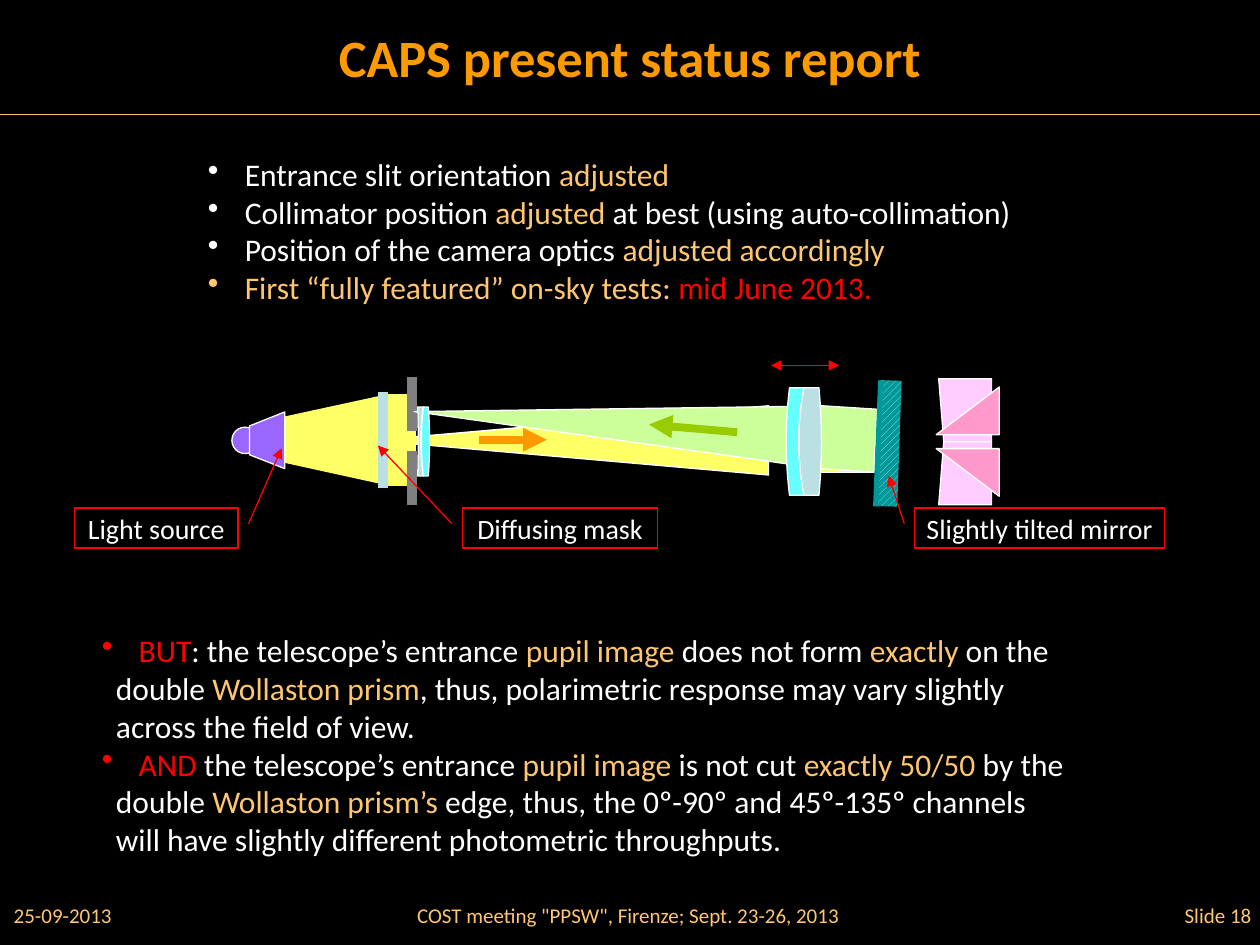
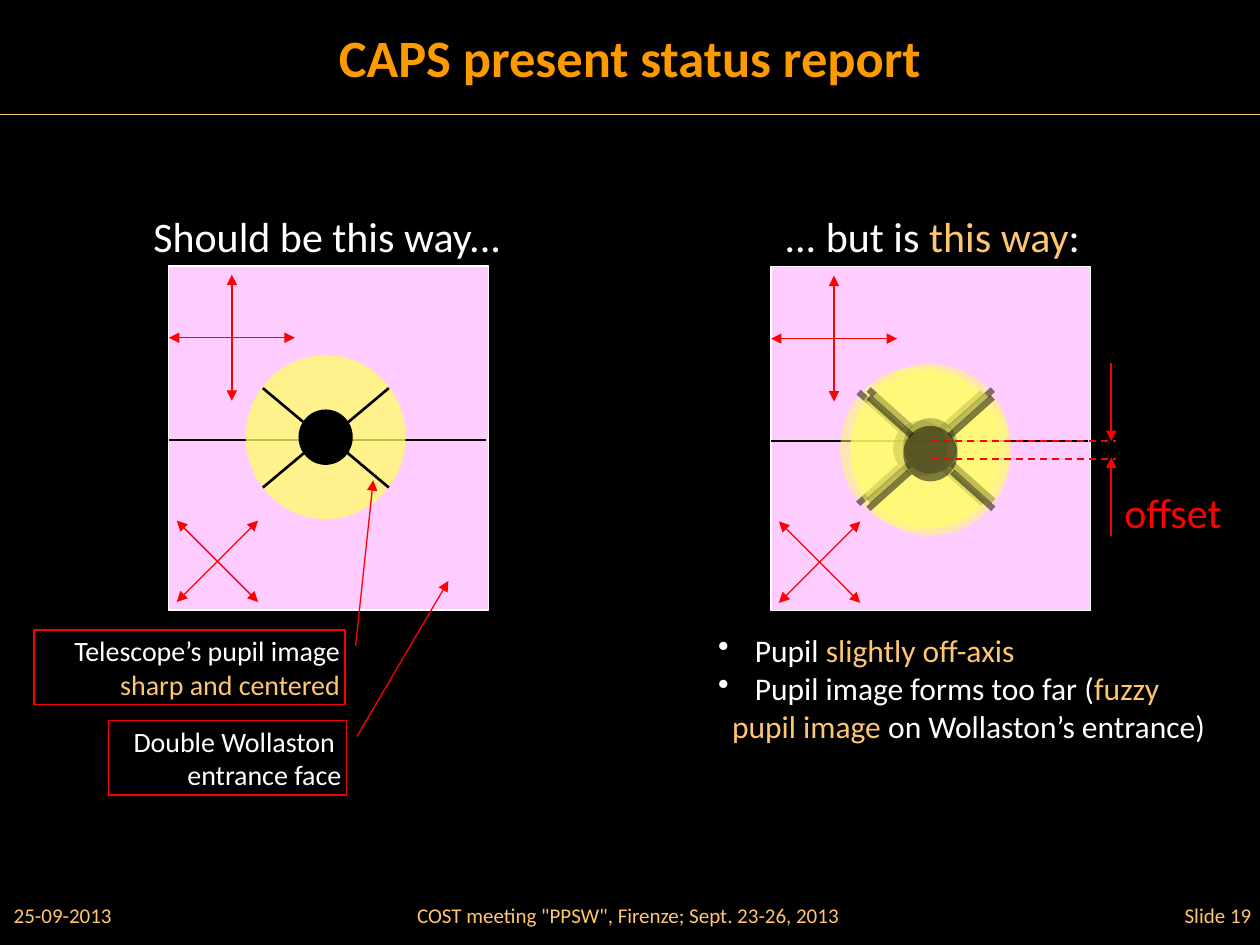
"""Build two status slides: the collimator bench and the pupil offset."""
from lxml import etree
from pptx import Presentation
from pptx.dml.color import RGBColor
from pptx.enum.dml import MSO_LINE, MSO_PATTERN
from pptx.enum.shapes import MSO_CONNECTOR, MSO_SHAPE
from pptx.enum.text import MSO_ANCHOR, MSO_AUTO_SIZE, PP_ALIGN
from pptx.oxml.ns import qn
from pptx.util import Pt

RECT, OVAL, CONE = MSO_SHAPE.RECTANGLE, MSO_SHAPE.OVAL, MSO_SHAPE.ISOSCELES_TRIANGLE
CALL = MSO_SHAPE.LINE_CALLOUT_1
LEFT, MID, RIGHT = PP_ALIGN.LEFT, PP_ALIGN.CENTER, PP_ALIGN.RIGHT
TOP, CENTER = MSO_ANCHOR.TOP, MSO_ANCHOR.MIDDLE
STRAIGHT, DASH, STRIPES = MSO_CONNECTOR.STRAIGHT, MSO_LINE.DASH, MSO_PATTERN.WIDE_UPWARD_DIAGONAL
TAIL, BOTH = ("tailEnd",), ("headEnd", "tailEnd")

HUES = {
    "black": "000000", "white": "FFFFFF", "red": "FF0000", "gold": "FFC671",
    "title": "FD9A00", "yellow": "FFFF66", "lime": "CCFF99", "leaf": "99CC00",
    "orange": "FF9900", "gray": "808080", "pale": "BBE0E3", "aqua": "66FFFF",
    "teal": "009999", "violet": "9966FF", "pink": "FFCCFF", "rose": "FF99CC",
}
FONT = "Calibri"
TITLE = "CAPS present status report"
TITLE_BOX = (164, 14.4, 392, 36)
RULE = (0, 65.5, 720, 65.5)
FOOTS = [
    ("25-09-2013", (5, 514, 100, 17.4), LEFT),
    ('COST meeting "PPSW", Firenze; Sept. 23-26, 2013', (199, 514, 320, 17.4), MID),
    ("Slide {}", (618, 514, 100, 17.4), RIGHT),
]

DONE = [
    ("•", "Entrance slit orientation ", ("adjusted", "gold")),
    ("•", "Collimator position ", ("adjusted", "gold"), " at best (using auto-collimation)"),
    ("•", "Position of the camera optics ", ("adjusted accordingly", "gold")),
    ("•", ("First “fully featured” on-sky tests: ", "gold"), ("mid June 2013.", "red")),
]
ISSUES = [
    ("•", ("BUT", "red"), ": the telescope’s entrance ", ("pupil image", "gold"),
     " does not form", (" exactly", "gold"), " on the"),
    ("+", "double ", ("Wollaston prism", "gold"),
     ", thus, polarimetric response may vary slightly"),
    ("+", "across the field of view."),
    ("•", ("AND", "red"), " the telescope’s entrance ", ("pupil image", "gold"),
     " is not cut ", ("exactly 50/50", "gold"), " by the"),
    ("+", "double ", ("Wollaston prism’s", "gold"),
     " edge, thus, the 0º-90º and 45º-135º channels"),
    ("+", "will have slightly different photometric throughputs."),
]
FAULTS = [
    ("•", "Pupil ", ("slightly off-axis", "gold")),
    ("•", "Pupil image forms too far (", ("fuzzy", "gold")),
    ("+", ("pupil image", "gold"), " on Wollaston’s entrance)"),
]

LAMP = [
    ("shape", CONE, (306.4, 138.6, 39.6, 226.1), "yellow", "white", 270),
    ("shape", RECT, (454.3, 234, 45.4, 36), "yellow", "white"),
    ("shape", RECT, (220.3, 225.4, 17.3, 51.8), "yellow", "yellow"),
    ("poly", [(216, 226.8), (159.8, 239), (159.8, 263.5), (216, 275.8)], "yellow", "yellow"),
    ("line", (235.4, 215.3, 235.4, 246.2), "gray", 6),
    ("line", (235.4, 257.8, 235.4, 288.7), "gray", 6),
]
BEAM = [
    ("shape", CONE, (331.9, 129.6, 34.6, 225.4), "lime", "white", 273.6),
    ("shape", RECT, (460.8, 232.6, 39.6, 36), "lime", "white", 3.6),
]
AXIS = 252.4
PRISM = [([(539.3, 0), (566.6, 0), (566.6, 36), (536.4, 36)], "pink"),
         ([(535, 4), (571, 4), (571, 31.2)], "rose")]
LENSES = [
    ((232.6, 272), (238.7, 239), (241.9, 240.5), "pale"),
    ((232.6, 272), (241.9, 240.8), (244.8, 245.5), "aqua"),
    ((221.6, 283), (451.2, 449.3), (459.4, 456.5), "aqua"),
    ((221.6, 283), (459.4, 456.5), (468, 469.4), "pale"),
]
BENCH = [
    ("line", (503.3, 217.4, 500.4, 289.4), "teal", 3),
    ("line", (218.9, 223.9, 218.9, 278.6), "pale", 6),
    ("shape", OVAL, (132.5, 244.1, 15.1, 15.1), "violet", "white"),
    ("poly", [(162.7, 235.4), (142.6, 243.4), (142.6, 259.9), (162.7, 267.8)], "violet", "white"),
    ("line", (440.6, 208.8, 479.5, 208.8), "red", 0.75, BOTH),
    ("line", (421.2, 247, 370.8, 242.6), "leaf", 4.5, TAIL),
    ("line", (273.6, 251.3, 312.5, 251.3), "orange", 4.5, TAIL),
]
MIRROR = (501.8, 217.4, 12.2, 72)
TAGS = [
    ((522.7, 290.2, 142.6, 23), (0.391, -0.042, -0.799, -0.104), [("", "Slightly tilted mirror")]),
    ((264.2, 290.2, 111.6, 23), (0.391, -0.054, -1.549, -0.432), [("", "Diffusing mask")]),
    ((42.5, 290.2, 93.6, 23), (0.391, 1.064, -1.484, 1.266), [("", "Light source")]),
]
NOTES = [
    ((19.4, 360, 177.8, 42.5), (0.213, 1.034, -2.015, 1.091),
     [("", "Telescope’s pupil image"), ("", ("sharp and centered", "gold"))]),
    ((61.9, 411.8, 136.1, 42.5), (0.213, 1.044, -1.879, 1.428),
     [("", "Double Wollaston "), ("", "entrance face")]),
]

FACES = [(96.5, 152), (440.6, 152.5)]
FACE = (182.6, 196.6)
EDGE = (0, 99.4, 181, 99.4)
AXES = [(36, 5, 36, 77), (0, 41, 72, 41), (51, 145.5, 4.5, 192), (4.5, 145.5, 51, 192)]
PUPIL, HOLE = (91.4, 93.6), (31, 31.7)
SHARP = (140.4, 203)
HUB = (187.2, 250.2)
GHOSTS = [(480.2, 209.5), (486, 208), (486, 212.4)]
VANES = [(6.2, 23.8, 33, 41.8), (54, 66, 31.7, 41.8), (52.6, 23.8, 33, 318.2), (6.2, 66, 31.7, 318.2)]
HEADS = [
    ((69, 119, 236, 34), [("", "Should be this way...")], "white"),
    ((433.4, 119, 198.7, 34), [("", "... but is ", ("this way", "gold"), ":")], "white"),
    ((633.6, 276.5, 73.4, 34), [("", ("offset", "red"))], "red"),
]
GAUGE = [
    ((532, 262.1, 638, 262.1), (), True), ((532, 252, 638, 252), (), True),
    ((635, 207.4, 635, 252), TAIL, False), ((635, 306, 635, 261.4), TAIL, False),
]


def rgb(hue):
    return RGBColor.from_string(HUES[hue])


def put(obj, vals):
    for name, val in vals.items():
        setattr(obj, name, val)


def pts(nums):
    return [Pt(num) for num in nums]


def add(elem, tag, **attrs):
    return etree.SubElement(elem, qn("a:" + tag), attrs)


def ends(obj, tags):
    for tag in tags:
        add(obj.element.spPr.find(qn("a:ln")), tag, type="triangle")


def paint(obj, fill, edge):
    obj.shadow.inherit = False
    obj.fill.solid()
    obj.fill.fore_color.rgb = rgb(fill)
    if edge:
        obj.line.color.rgb = rgb(edge)
        obj.line.width = Pt(0.75)
    else:
        obj.line.fill.background()


def shape(slide, kind, box, fill, edge=None, turn=0, alpha=100):
    obj = slide.shapes.add_shape(kind, *pts(box))
    paint(obj, fill, edge)
    obj.rotation = turn
    if alpha < 100:
        add(obj.element.spPr.find(".//" + qn("a:srgbClr")), "alpha", val=str(alpha * 1000))
    return obj


def poly(slide, dots, fill, edge):
    dots = [pts(dot) for dot in dots]
    form = slide.shapes.build_freeform(*dots[0])
    form.add_line_segments(dots[1:], close=True)
    paint(form.convert_to_shape(), fill, edge)


def line(slide, span, hue, width, tips=(), dash=False):
    obj = slide.shapes.add_connector(STRAIGHT, *pts(span))
    obj.line.color.rgb = rgb(hue)
    obj.line.width = Pt(width)
    if dash:
        obj.line.dash_style = DASH
    ends(obj, tips)
    add(obj.element.spPr, "effectLst")


def draw(slide, parts):
    tools = {"shape": shape, "poly": poly, "line": line}
    for kind, *args in parts:
        tools[kind](slide, *args)


def fill_text(obj, paras, size, hue="white", align=LEFT, anchor=TOP, bold=False):
    frame = obj.text_frame
    put(frame, {"word_wrap": True, "auto_size": MSO_AUTO_SIZE.NONE, "vertical_anchor": anchor,
                "margin_left": Pt(2.9), "margin_right": Pt(2.9),
                "margin_top": Pt(1.4), "margin_bottom": Pt(1.4)})
    for num, (mark, *runs) in enumerate(paras):
        para = frame.add_paragraph() if num else frame.paragraphs[0]
        para.alignment = align
        props = para._p.get_or_add_pPr()
        if mark == "•":
            put_in = {"marL": Pt(21), "indent": Pt(-21)}
            add(props, "buChar", char=mark)
        else:
            put_in = {"marL": Pt(8 if mark else 0), "indent": 0}
            add(props, "buNone")
        for name, val in put_in.items():
            props.set(name, str(val))
        for part in runs:
            words, tint = (part, hue) if isinstance(part, str) else part
            run = para.add_run()
            run.text = words
            put(run.font, {"name": FONT, "size": Pt(size), "bold": bold})
            run.font.color.rgb = rgb(tint)


def label(slide, box, paras, size, **style):
    fill_text(slide.shapes.add_textbox(*pts(box)), paras, size, **style)


def callout(slide, box, bends, paras, align):
    obj = shape(slide, CALL, box, "black", "red")
    for num, bend in enumerate(bends):
        obj.adjustments[num] = bend
    ends(obj, TAIL)
    fill_text(obj, paras, 16, align=align, anchor=CENTER)


def lens(slide, rows, left, right, fill):
    top, low = rows
    steps = [num / 6 for num in range(-6, 7)]

    def side(rim, core):
        return [(rim + (core - rim) * (1 - t * t), (top + low + t * (low - top)) / 2) for t in steps]
    poly(slide, side(*left) + side(*right)[::-1], fill, "white")


def start(deck, page):
    slide = deck.slides.add_slide(deck.slide_layouts[5])
    line(slide, RULE, "gold", 0.75)
    title = slide.shapes.title
    put(title, dict(zip(("left", "top", "width", "height"), pts(TITLE_BOX))))
    fill_text(title, [("", TITLE)], 30, hue="title", align=MID, anchor=CENTER, bold=True)
    for words, box, align in FOOTS:
        label(slide, box, [("", words.format(page))], 12, hue="gold", align=align, anchor=CENTER)
    return slide


def bench(slide):
    label(slide, (116, 87.1, 560, 90), DONE, 18)
    label(slide, (55.4, 359.3, 610, 133), ISSUES, 18)
    draw(slide, LAMP)
    for sign in (-1, 1):
        for dots, fill in PRISM:
            poly(slide, [(x, AXIS + sign * y) for x, y in dots], fill, "white")
    draw(slide, BEAM)
    for spec in LENSES:
        lens(slide, *spec)
    glass = shape(slide, RECT, MIRROR, "teal", turn=2)
    glass.fill.patterned()
    glass.fill.pattern = STRIPES
    glass.fill.fore_color.rgb = rgb("pale")
    glass.fill.back_color.rgb = rgb("teal")
    draw(slide, BENCH)
    for tag in TAGS:
        callout(slide, *tag, MID)


def pupils(slide):
    for x, y in FACES:
        shape(slide, RECT, (x, y, *FACE), "pink", "white")
        shift = (x, y, x, y)
        line(slide, [a + b for a, b in zip(shift, EDGE)], "black", 1)
        for axis in AXES:
            line(slide, [a + b for a, b in zip(shift, axis)], "red", 0.75, BOTH)
    shape(slide, OVAL, (*SHARP, *PUPIL), "yellow", alpha=75)
    shape(slide, OVAL, (170.6, 234, *HOLE), "black")
    hub_x, hub_y = HUB
    for dx in (-1, 1):
        for dy in (-1, 1):
            line(slide, (hub_x - 1 + 12 * dx, hub_y + 8.3 * dy,
                         hub_x - 1 + 36 * dx, hub_y + 28.4 * dy), "black", 1.5)
    for x, y in GHOSTS:
        shape(slide, OVAL, (x, y, *PUPIL), "yellow", alpha=50)
        shape(slide, OVAL, (x + 30.2, y + 31, *HOLE), "black", alpha=50)
        for dx, dy, long, turn in VANES:
            shape(slide, RECT, (x + dx, y + dy, long, 3.6), "black", turn=turn, alpha=50)
    for note in NOTES:
        callout(slide, *note, RIGHT)
    label(slide, (407.5, 359.3, 310, 70), FAULTS, 18)
    for span, tips, dash in GAUGE:
        line(slide, span, "red", 1, tips, dash)
    for box, paras, hue in HEADS:
        label(slide, box, paras, 24, hue=hue, align=MID)


def main():
    deck = Presentation()
    put(deck, {"slide_width": Pt(720), "slide_height": Pt(540)})
    back = deck.slide_master.background.fill
    back.solid()
    back.fore_color.rgb = rgb("black")
    for page, build in ((18, bench), (19, pupils)):
        build(start(deck, page))
    deck.save("out.pptx")


if __name__ == "__main__":
    main()
